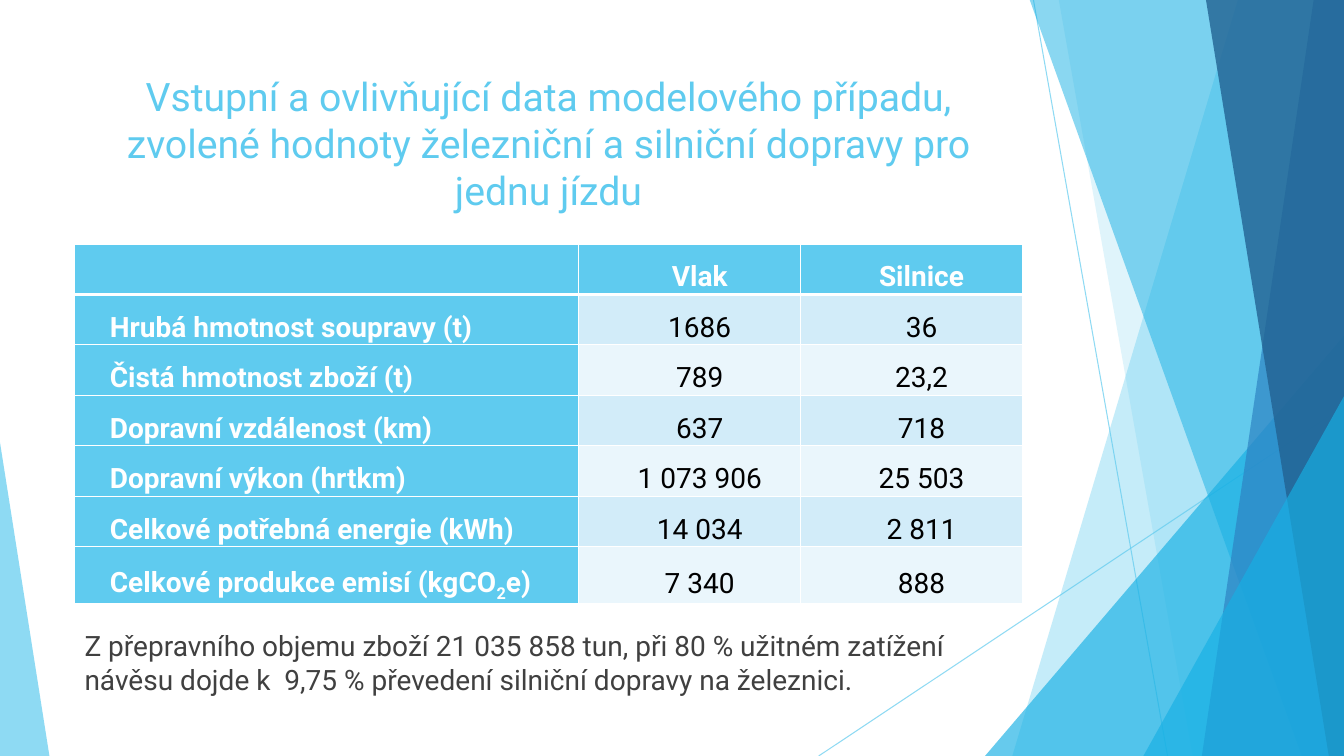
"""Builds a slide comparing rail and road transport input values for one trip."""
from lxml.etree import SubElement
from pptx import Presentation
from pptx.dml.color import RGBColor
from pptx.enum.shapes import MSO_CONNECTOR, MSO_SHAPE
from pptx.enum.text import MSO_ANCHOR, PP_ALIGN
from pptx.oxml.ns import qn
from pptx.util import Inches, Pt

COLORS = {
    "sky": "5FCBEF", "cyan": "17B0E4", "blue": "2E83C3", "navy": "226292",
    "band_dark": "D2ECF9", "band_light": "EAF6FC",
    "white": "FFFFFF", "black": "000000", "gray": "404040",
}
FONT = "Roboto"


def paint(fill, color, opacity=100):
    fill.solid()
    fill.fore_color.rgb = RGBColor.from_string(COLORS[color])
    if opacity < 100:
        rgb = fill._xPr.find(".//" + qn("a:srgbClr"))
        SubElement(rgb, qn("a:alpha"), val=str(opacity * 1000))


def set_font(paragraph, size, color, bold=False):
    font = paragraph.font
    font.name, font.size, font.bold = FONT, Pt(size), bold
    font.color.rgb = RGBColor.from_string(COLORS[color])


prs = Presentation()
prs.slide_width, prs.slide_height = Inches(13.33), Inches(7.5)
slide = prs.slides.add_slide(prs.slide_layouts[6])
shapes = slide.shapes

for ray in [(10.25, 0, 11.58, 7.5), (13.33, 4.03, 8.12, 7.5)]:
    line = shapes.add_connector(MSO_CONNECTOR.STRAIGHT, *map(Inches, ray))
    line.line.width = Pt(0.75)
    paint(line.line.fill, "sky", 70)
    SubElement(line._element.spPr, qn("a:effectLst"))

facets = [
    ("band", (12.28, 10.04), "sky", 36),
    ("band", (10.5, 11.83), "sky", 20),
    ("triangle", (9.77, 3.33, 3.56, 4.17, 1), "cyan", 66),
    ("band", (10.21, 12.91), "cyan", 50),
    ("band", (13.03, 11.92), "blue", 70),
    ("band", (11.96, 13.18), "navy", 80),
    ("triangle", (11.34, 3.93, 1.99, 3.57, 1), "cyan", 66),
    ("triangle", (0, 4.39, 0.49, 3.11, 0), "sky", 70),
]
for kind, geometry, color, opacity in facets:
    if kind == "band":
        top_x, bottom_x = geometry
        outline = shapes.build_freeform(Inches(top_x), Inches(-0.01))
        corners = [(13.33, -0.01), (13.33, 7.5), (bottom_x, 7.5)]
        outline.add_line_segments([(Inches(x), Inches(y)) for x, y in corners])
        facet = outline.convert_to_shape()
    else:
        *box, apex = geometry
        facet = shapes.add_shape(MSO_SHAPE.ISOSCELES_TRIANGLE, *map(Inches, box))
        facet.adjustments[0] = apex
    facet.shadow.inherit = False
    facet.line.fill.background()
    paint(facet.fill, color, opacity)

title = shapes.add_textbox(Inches(0.74), Inches(0.67), Inches(9.4), Inches(1.75))
title.text_frame.word_wrap = True
heading = title.text_frame.paragraphs[0]
heading.alignment = PP_ALIGN.CENTER
heading.add_run().text = "Vstupní a ovlivňující data modelového případu,"
heading.add_line_break()
heading.add_run().text = "zvolené hodnoty železniční a silniční dopravy pro jednu jízdu"
set_font(heading, 28, "sky")

rows = [
    ("", "Vlak", "Silnice"),
    ("Hrubá hmotnost soupravy (t)", "1686", "36"),
    ("Čistá hmotnost zboží (t)", "789", "23,2"),
    ("Dopravní vzdálenost (km)", "637", "718"),
    ("Dopravní výkon (hrtkm)", "1 073 906", "25 503"),
    ("Celkové potřebná energie (kWh)", "14 034", "2 811"),
    ("Celkové produkce emisí (kgCO|2|e)", "7 340", "888"),
]
table = shapes.add_table(len(rows), 3, Inches(0.74), Inches(2.42),
                         Inches(9.4), Inches(3.48)).table
for column, width in zip(table.columns, (5, 2.2, 2.2)):
    column.width = Inches(width)

for r, row in enumerate(rows):
    table.rows[r].height = Inches(0.54 if r == len(rows) - 1 else 0.49)
    for c, text in enumerate(row):
        cell = table.cell(r, c)
        is_label = r == 0 or c == 0
        cell.vertical_anchor = MSO_ANCHOR.MIDDLE
        cell.margin_left = cell.margin_right = Inches(0.07)
        cell.margin_top = cell.margin_bottom = 0

        for side in ("L", "R", "T", "B"):
            under_header = (r, side) in ((0, "B"), (1, "T"))
            border = SubElement(cell._tc.get_or_add_tcPr(), qn("a:ln" + side),
                                w=str(Pt(3 if under_header else 1)))
            solid = SubElement(border, qn("a:solidFill"))
            SubElement(solid, qn("a:srgbClr"), val=COLORS["white"])
        band = "band_dark" if r % 2 else "band_light"
        paint(cell.fill, "sky" if is_label else band)

        entry = cell.text_frame.paragraphs[0]
        entry.alignment = PP_ALIGN.CENTER if c else PP_ALIGN.JUSTIFY
        entry.line_spacing = 1.5
        indent = entry._p.get_or_add_pPr()
        indent.set("marL", str(Inches(0 if c else 0.08)))
        indent.set("indent", str(Inches(0.2)))
        set_font(entry, 20, "white" if is_label else "black", is_label)
        for i, part in enumerate(text.split("|") if text else []):
            run = entry.add_run()
            run.text = part
            if i == 1:
                run.font._element.set("baseline", "-25000")

conclusion = shapes.add_textbox(Inches(0.74), Inches(6.19), Inches(9.4), Inches(0.77))
conclusion.text_frame.word_wrap = True
summary = conclusion.text_frame.paragraphs[0]
summary.text = ("Z přepravního objemu zboží 21 035 858 tun, při 80 % užitném zatížení "
                "návěsu dojde k  9,75 % převedení silniční dopravy na železnici.")
set_font(summary, 20, "gray")

prs.save("out.pptx")
